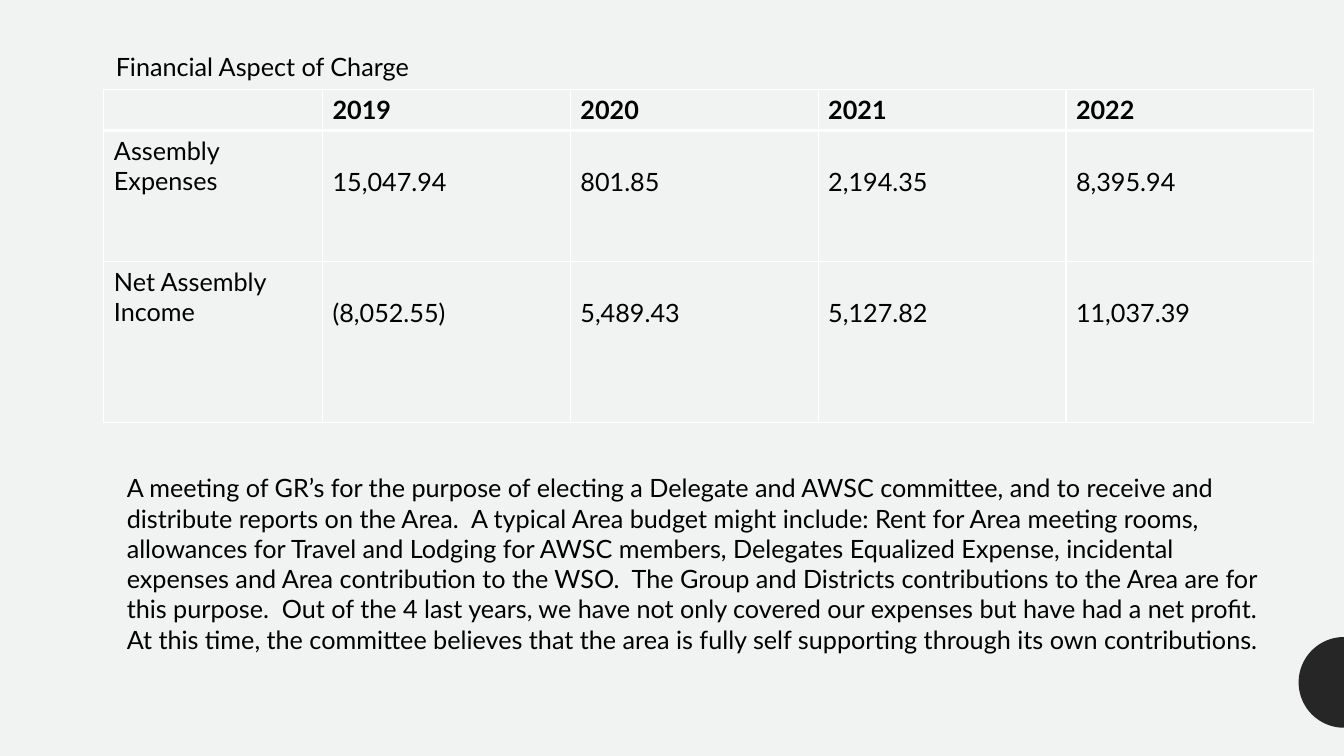
"""Builds the slide on the financial aspect of the charge."""
from math import cos, pi, sin

from lxml.etree import SubElement
from pptx import Presentation
from pptx.dml.color import RGBColor
from pptx.enum.text import MSO_AUTO_SIZE
from pptx.oxml.ns import qn
from pptx.util import Inches, Pt

COLORS = {"background": "F0F3F2", "text": "000000", "border": "FFFFFF", "dot": "262626"}
FONT = "Lato"
WIDTH, HEIGHT = Inches(13.333), Inches(7.5)
COLUMNS = [16.27] + [18.44] * 4
ROWS = [5.33, 17.33, 21.33]
FINANCES = [
    ["", "2019", "2020", "2021", "2022"],
    ["Assembly Expenses", "15,047.94", "801.85", "2,194.35", "8,395.94"],
    ["Net Assembly\nIncome", "(8,052.55)", "5,489.43", "5,127.82", "11,037.39"],
]
TITLE = "Financial Aspect of Charge"
SUMMARY = (
    "A meeting of GR’s for the purpose of electing a Delegate and AWSC committee, "
    "and to receive and distribute reports on the Area.  A typical Area budget might "
    "include: Rent for Area meeting rooms, allowances for Travel and Lodging for AWSC "
    "members, Delegates Equalized Expense, incidental expenses and Area contribution "
    "to the WSO.  The Group and Districts contributions to the Area are for this "
    "purpose.  Out of the 4 last years, we have not only covered our expenses but have "
    "had a net profit.  At this time, the committee believes that the area is fully "
    "self supporting through its own contributions."
)


def across(percent):
    """Return a share of the slide's width."""
    return round(WIDTH * percent / 100)


def down(percent):
    """Return a share of the slide's height."""
    return round(HEIGHT * percent / 100)


def color(name):
    """Return a named colour."""
    return RGBColor.from_string(COLORS[name])


def write_text(text_frame, text, bold=False):
    """Put text in a frame and format its runs."""
    text_frame.text = text
    text_frame.word_wrap = True
    for paragraph in text_frame.paragraphs:
        for run in paragraph.runs:
            run.font.name = FONT
            run.font.size = Pt(18)
            run.font.bold = bold
            run.font.color.rgb = color("text")


def add_text(slide, text, left, top, width, height):
    """Add a text box placed by shares of the slide."""
    box = slide.shapes.add_textbox(across(left), down(top), across(width), down(height))
    write_text(box.text_frame, text)
    box.text_frame.auto_size = MSO_AUTO_SIZE.SHAPE_TO_FIT_TEXT


def add_borders(cell, top, bottom):
    """Draw the four borders of a cell, with widths in points."""
    properties = cell._tc.get_or_add_tcPr()
    for side, points in (("L", 1), ("R", 1), ("T", top), ("B", bottom)):
        line = SubElement(properties, qn(f"a:ln{side}"), w=str(Pt(points)))
        fill = SubElement(line, qn("a:solidFill"))
        SubElement(fill, qn("a:srgbClr"), val=COLORS["border"])


def add_finances(slide, left, top):
    """Add the table of yearly expenses and income."""
    frame = slide.shapes.add_table(
        len(ROWS), len(COLUMNS), across(left), down(top),
        across(sum(COLUMNS)), down(sum(ROWS)))
    table = frame.table
    table.horz_banding = False
    for column, share in zip(table.columns, COLUMNS):
        column.width = across(share)
    for row, share in zip(table.rows, ROWS):
        row.height = down(share)
    for row_index, values in enumerate(FINANCES):
        for column_index, value in enumerate(values):
            cell = table.cell(row_index, column_index)
            write_text(cell.text_frame, value, bold=row_index == 0)
            if row_index and column_index:
                cell.margin_top = Inches(0.36)
            add_borders(cell, 3 if row_index == 1 else 1, 3 if row_index == 0 else 1)
            cell.fill.background()


def add_half_dot(slide, middle, radius, steps=48):
    """Add a half disc that rests on the slide's right edge."""
    angles = [pi * step / steps for step in range(steps + 1)]
    points = [(round(WIDTH - down(radius) * sin(angle)),
               round(down(middle) - down(radius) * cos(angle))) for angle in angles]
    builder = slide.shapes.build_freeform(*points[0])
    builder.add_line_segments(points[1:], close=True)
    shape = builder.convert_to_shape()
    shape.shadow.inherit = False
    shape.fill.solid()
    shape.fill.fore_color.rgb = color("dot")
    shape.line.fill.background()


def main():
    """Build and save the presentation."""
    presentation = Presentation()
    presentation.slide_width, presentation.slide_height = WIDTH, HEIGHT
    slide = presentation.slides.add_slide(presentation.slide_layouts[6])
    slide.background.fill.solid()
    slide.background.fill.fore_color.rgb = color("background")
    add_half_dot(slide, middle=90.27, radius=6)
    add_finances(slide, left=7.73, top=11.87)
    add_text(slide, SUMMARY, left=8.7, top=61.87, width=87.38, height=29.6)
    add_text(slide, TITLE, left=7.88, top=6.13, width=90.08, height=5.33)
    presentation.save("out.pptx")


if __name__ == "__main__":
    main()
